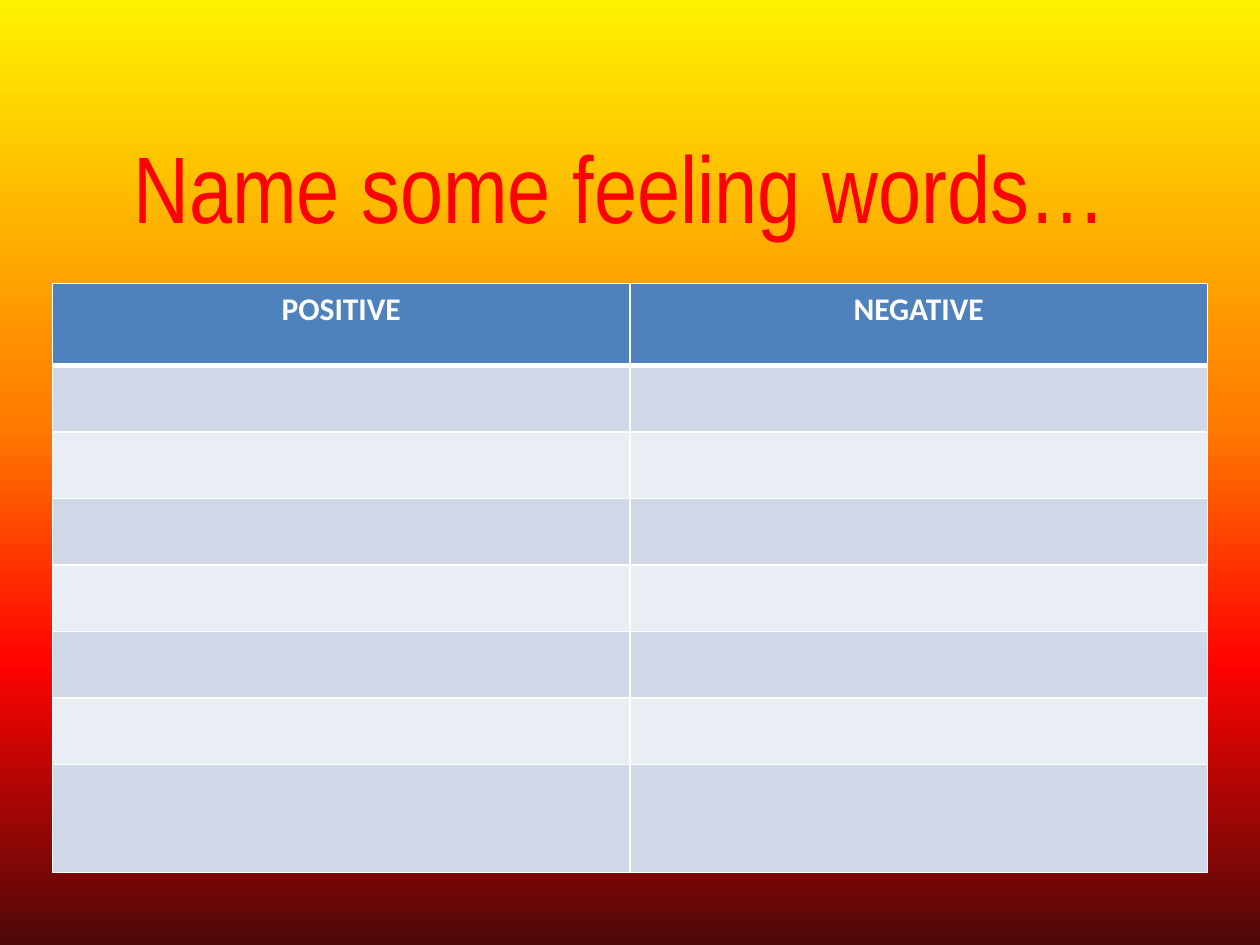
from dataclasses import dataclass

from lxml.etree import SubElement
from pptx import Presentation
from pptx.dml.color import RGBColor
from pptx.enum.text import MSO_ANCHOR, PP_ALIGN
from pptx.oxml.ns import qn
from pptx.slide import Slide
from pptx.table import _Cell
from pptx.util import Cm, Pt

COLORS = {
    "title": "FF0000",
    "header": "4F81BD",
    "odd": "D0D8E8",
    "even": "E9EDF4",
    "white": "FFFFFF",
}
SUNSET = [(0, "FFF200"), (45, "FF7A00"), (70, "FF0300"), (100, "4D0808")]


@dataclass
class Row:
    height: float
    fill: str
    words: tuple[str, str] = ("", "")
    top: float = 1
    bottom: float = 1


ROWS = [
    Row(1.65, "header", ("POSITIVE", "NEGATIVE"), bottom=3),
    Row(1.34, "odd", top=3),
    *(Row(1.34, "odd" if number % 2 else "even") for number in range(2, 7)),
    Row(2.18, "odd"),
]


def paint_background(slide: Slide) -> None:
    fill = slide.background.fill
    fill.gradient()
    fill.gradient_angle = 270
    stops = slide.element.find(".//" + qn("a:gsLst"))
    stops.clear()
    for percent, color in SUNSET:
        stop = SubElement(stops, qn("a:gs"), pos=str(percent * 1000))
        SubElement(stop, qn("a:srgbClr"), val=color)


def add_title(slide: Slide, words: str) -> None:
    title = slide.shapes.title
    title.left, title.top, title.width, title.height = Cm(1.7), Cm(1.7), Cm(21.6), Cm(4.1)
    frame = title.text_frame
    frame.text = words
    frame.vertical_anchor = MSO_ANCHOR.MIDDLE
    frame.paragraphs[0].alignment = PP_ALIGN.CENTER
    font = frame.paragraphs[0].runs[0].font
    font.name, font.size = "Arial Narrow", Pt(54)
    font.color.rgb = RGBColor.from_string(COLORS["title"])


def draw_borders(cell: _Cell, row: Row) -> None:
    properties = cell._tc.get_or_add_tcPr()
    for side, points in (("L", 1), ("R", 1), ("T", row.top), ("B", row.bottom)):
        border = SubElement(properties, qn(f"a:ln{side}"), w=str(Pt(points)))
        solid = SubElement(border, qn("a:solidFill"))
        SubElement(solid, qn("a:srgbClr"), val=COLORS["white"])


def fill_cell(cell: _Cell, row: Row, word: str) -> None:
    draw_borders(cell, row)
    cell.fill.solid()
    cell.fill.fore_color.rgb = RGBColor.from_string(COLORS[row.fill])
    if not word:
        return
    cell.text_frame.text = word
    heading = cell.text_frame.paragraphs[0]
    heading.alignment = PP_ALIGN.CENTER
    font = heading.runs[0].font
    font.name, font.size, font.bold = "Calibri", Pt(18), True
    font.color.rgb = RGBColor.from_string(COLORS["white"])


def add_feelings_table(slide: Slide, rows: list[Row]) -> None:
    height = sum(row.height for row in rows)
    table = slide.shapes.add_table(
        len(rows), 2, Cm(1.06), Cm(5.72), Cm(23.28), Cm(height)
    ).table
    for table_row, row in zip(table.rows, rows):
        table_row.height = Cm(row.height)
        for cell, word in zip(table_row.cells, row.words):
            fill_cell(cell, row, word)


def main() -> None:
    presentation = Presentation()
    presentation.slide_width, presentation.slide_height = Cm(25.4), Cm(19.05)
    slide = presentation.slides.add_slide(presentation.slide_layouts[5])
    paint_background(slide)
    add_title(slide, "Name some feeling words…")
    add_feelings_table(slide, ROWS)
    presentation.save("out.pptx")


if __name__ == "__main__":
    main()
